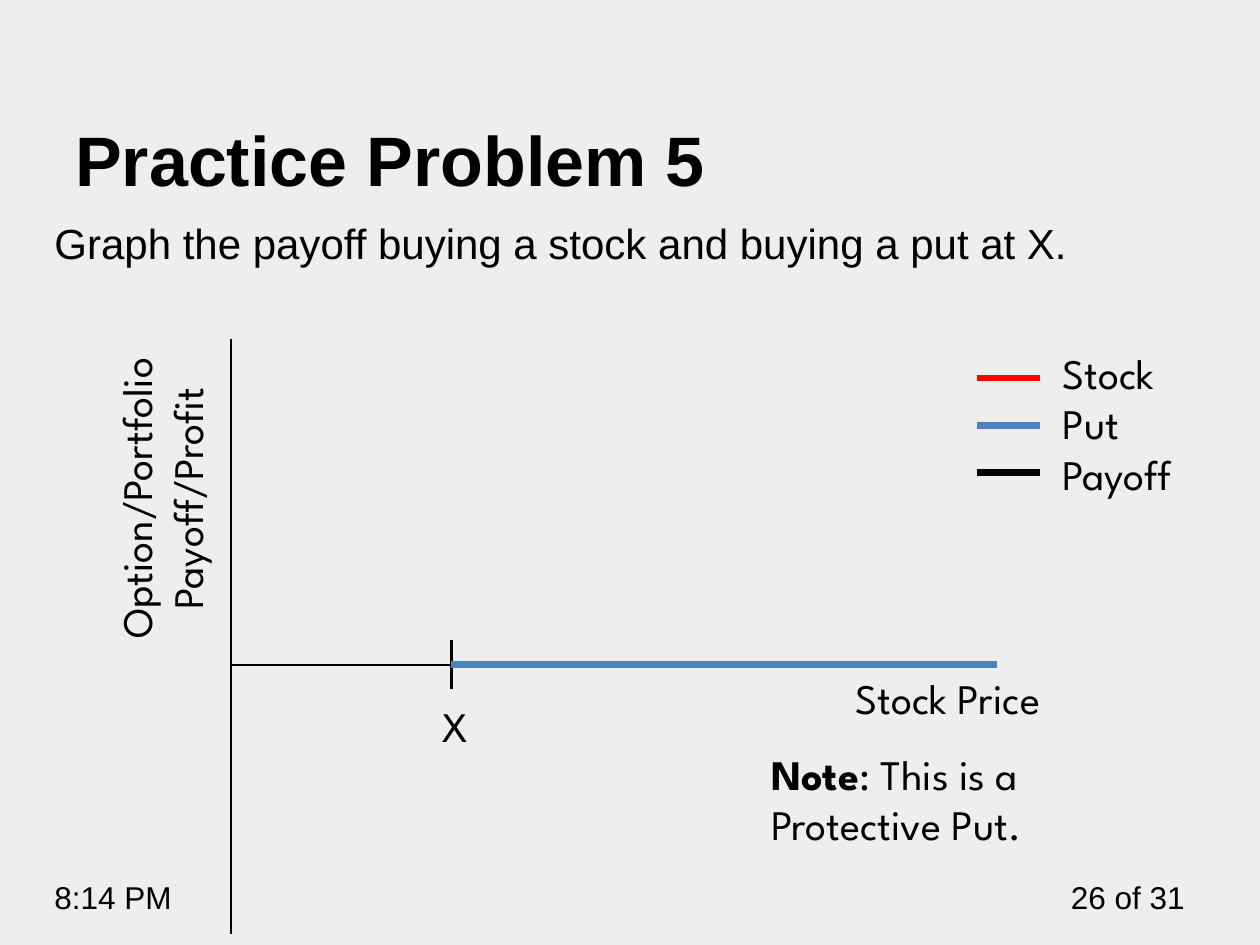
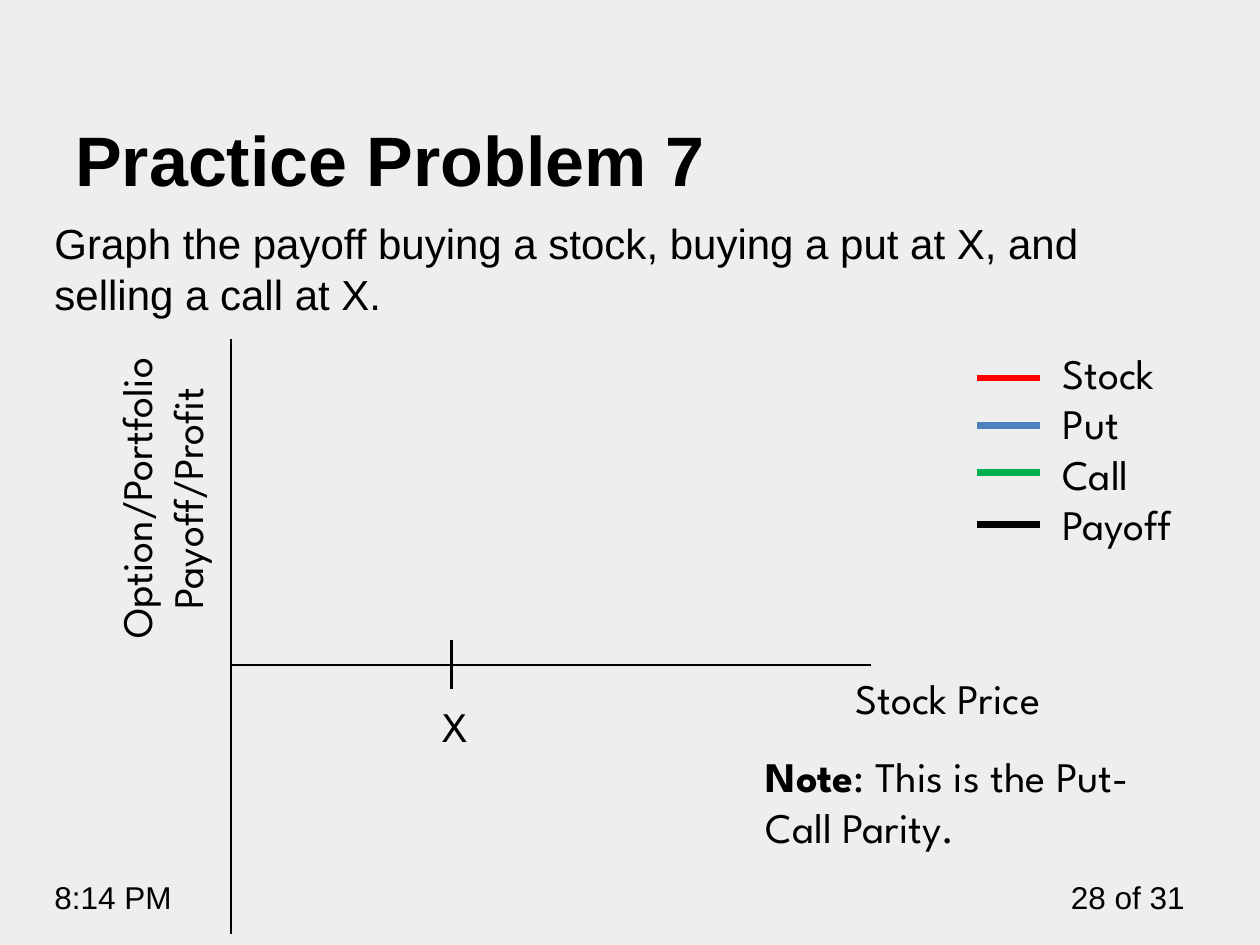
from dataclasses import dataclass
from pptx import Presentation
from pptx.dml.color import RGBColor as RGB
from pptx.enum.shapes import MSO_CONNECTOR as CONN
from pptx.enum.text import MSO_ANCHOR as ANCHOR, MSO_AUTO_SIZE as AUTO, PP_ALIGN as ALIGN
from pptx.oxml.ns import qn
from pptx.util import Pt
from lxml.etree import SubElement


@dataclass(frozen=True)
class Theme:
    back: RGB = RGB(0xEE, 0xEE, 0xEE)
    ink: RGB = RGB(0, 0, 0)
    stock: RGB = RGB(0xFF, 0, 0)
    put: RGB = RGB(0x4F, 0x81, 0xBD)
    call: RGB = RGB(0, 0xB0, 0x50)
    head_font: str = "Arial"
    graph_font: str = "League Spartan"
    title: int = 40
    text: int = 24
    footer: int = 18
    axis: float = 1.5
    series: float = 4


T = Theme()
SERIES = {"Stock": T.stock, "Put": T.put, "Call": T.call, "Payoff": T.ink}
KEY_TOPS = (21, 48, 75, 105)


def add_text(s, box, text, font=T.graph_font, size=T.text, align=ALIGN.LEFT, grow=True):
    sp = s.shapes.add_textbox(*map(Pt, box))
    tf = sp.text_frame
    tf.word_wrap = True
    tf.auto_size = AUTO.SHAPE_TO_FIT_TEXT if grow else AUTO.NONE
    tf.text = text
    for p in tf.paragraphs:
        p.alignment = align
        for r in p.runs:
            style_run(r, font, size)
    return sp


def style_run(r, font, size, bold=False):
    r.font.name = font
    r.font.size = Pt(size)
    r.font.bold = bold
    r.font.color.rgb = T.ink


def add_line(s, x1, y1, x2, y2, color=T.ink, width=T.axis):
    c = s.shapes.add_connector(CONN.STRAIGHT, Pt(x1), Pt(y1), Pt(x2), Pt(y2))
    c.line.color.rgb = color
    c.line.width = Pt(width)
    SubElement(c._element.spPr, qn("a:effectLst"))


def add_footer(s, x, y, w, page):
    add_text(s, (x, y, 114, 29), "8:14 PM", T.head_font, T.footer)
    add_text(s, (x + w - 84, y, 84, 29), f"{page} of 31", T.head_font, T.footer, ALIGN.RIGHT)


def add_heading(s, x, y, w, number, task):
    title = add_text(s, (x + 12, y, w - 12, 90), f"Practice Problem {number}",
                     T.head_font, T.title, grow=False)
    title.text_frame.vertical_anchor = ANCHOR.BOTTOM
    title.text_frame.paragraphs[0].runs[0].font.bold = True
    add_text(s, (x, y + 93, w, 356), task, T.head_font, grow=False)


def add_graph(s, x, y, w, h, put_line):
    zero, strike = y + 186, x + 126
    add_line(s, x, y, x, y + h)
    add_line(s, x, zero, x + w, zero)
    add_line(s, strike, zero - 14, strike, zero + 14)
    add_text(s, (strike - 12, zero + 16.6, 48, 36), "X")
    add_text(s, (x + w - 16, zero + 0.8, 180, 36), "Stock Price")
    label = add_text(s, (x - 142, y + 58, 205, 65.5), "Option/Portfolio Payoff/Profit",
                     align=ALIGN.CENTER)
    label.rotation = 270
    if put_line:
        add_line(s, strike, zero, x + w + 72, zero, T.put, T.series)


def add_legend(s, x, y, names):
    for name, top in zip(names, KEY_TOPS):
        add_line(s, x, y + top, x + 36, y + top, SERIES[name], T.series)
    add_text(s, (x + 42, y, 96, 6 + 29.5 * len(names)), "\n".join(names))


def add_note(s, x, y, text):
    sp = add_text(s, (x, y, 240, 65.5), "Note")
    p = sp.text_frame.paragraphs[0]
    p.runs[0].font.bold = True
    r = p.add_run()
    r.text = f": {text}"
    style_run(r, T.graph_font, T.text)


def add_problem(prs, page, number, task, names, note, note_at, put_line=False):
    s = prs.slides.add_slide(prs.slide_layouts[6])
    s.background.fill.solid()
    s.background.fill.fore_color.rgb = T.back
    add_footer(s, 24, 498, 660, page)
    add_heading(s, 24, 28, 660, number, task)
    add_graph(s, 132, 194, 366, 340, put_line)
    add_legend(s, 558, 195, names)
    add_note(s, *note_at, note)


def main():
    prs = Presentation()
    prs.slide_width, prs.slide_height = Pt(720), Pt(540)
    add_problem(prs, 26, 5, "Graph the payoff buying a stock and buying a put at X.",
                ("Stock", "Put", "Payoff"), "This is a Protective Put.", (433.5, 424), put_line=True)
    add_problem(prs, 28, 7,
                "Graph the payoff buying a stock, buying a put at X, and selling a call at X.",
                ("Stock", "Put", "Call", "Payoff"), "This is the Put-Call Parity.", (430.5, 425.5))
    prs.save("out.pptx")


if __name__ == "__main__":
    main()
